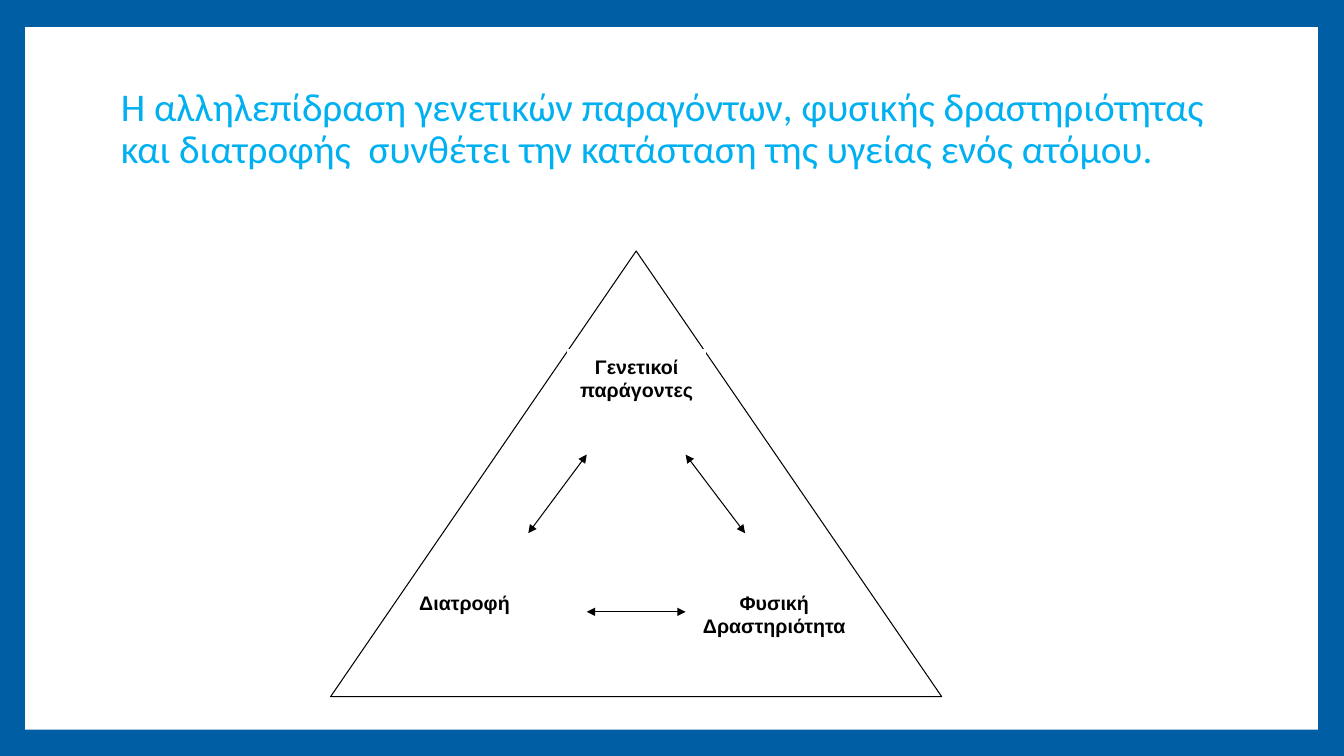
"""Build the slide on genes, activity and diet as a triangle of linked factors."""
from lxml.etree import SubElement
from pptx import Presentation
from pptx.dml.color import RGBColor
from pptx.enum.shapes import MSO_CONNECTOR as Connector, MSO_SHAPE as Shape
from pptx.enum.text import MSO_ANCHOR as Anchor, PP_ALIGN as Align
from pptx.oxml.ns import qn
from pptx.util import Inches, Pt

BLUE, SKY, WHITE, BLACK = "005EA4", "00B0F0", "FFFFFF", "000000"
LINE_WIDTH = 0.75

TITLE = ("Η αλληλεπίδραση γενετικών παραγόντων, φυσικής δραστηριότητας "
         "και διατροφής  συνθέτει την κατάσταση της υγείας ενός ατόμου.")
TITLE_BOX = (1.1, 0.57, 10.99, 1.44)
PANEL_BOX = (0.25, 0.27, 12.82, 6.97)
TRIANGLE_BOX = (3.28, 2.49, 6.06, 4.42)
FACTORS = [
    (["Γενετικοί παράγοντες"], (5.63, 3.47, 1.37, 0.78), Align.CENTER),
    (["Διατροφή"], (4.06, 5.81, 1.37, 0.78), Align.LEFT),
    (["Φυσική", "Δραστηριότητα"], (6.8, 5.81, 1.76, 0.78), Align.CENTER),
]
ARROWS = [
    ((5.82, 6.07), (6.8, 6.07)),
    ((5.82, 4.51), (5.24, 5.29)),
    ((6.8, 4.51), (7.39, 5.29)),
]


def color(value):
    return RGBColor.from_string(value)


def inches(values):
    return [Inches(value) for value in values]


def write(shape, lines, font="Arial", size=14, fill=BLACK, bold=False,
          align=Align.LEFT, anchor=Anchor.TOP, spacing=1.0):
    frame = shape.text_frame
    frame.word_wrap = True
    frame.vertical_anchor = anchor
    for index, line in enumerate(lines):
        paragraph = frame.add_paragraph() if index else frame.paragraphs[0]
        paragraph.alignment = align
        paragraph.line_spacing = spacing
        run = paragraph.add_run()
        run.text = line
        run.font.name = font
        run.font.size = Pt(size)
        run.font.bold = bold
        run.font.color.rgb = color(fill)


def add_white_shape(slide, kind, box, outline=None):
    shape = slide.shapes.add_shape(kind, *inches(box))
    shape.shadow.inherit = False
    shape.fill.solid()
    shape.fill.fore_color.rgb = color(WHITE)
    if outline:
        shape.line.color.rgb = color(outline)
        shape.line.width = Pt(LINE_WIDTH)
    else:
        shape.line.fill.background()
    return shape


def add_double_arrow(slide, start, end):
    arrow = slide.shapes.add_connector(Connector.STRAIGHT, *inches(start + end))
    arrow.line.color.rgb = color(BLACK)
    arrow.line.width = Pt(LINE_WIDTH)
    outline = arrow.line._get_or_add_ln()
    for tag in ("a:headEnd", "a:tailEnd"):
        SubElement(outline, qn(tag), type="triangle")
    SubElement(arrow._element.spPr, qn("a:effectLst"))


def main():
    presentation = Presentation()
    presentation.slide_width, presentation.slide_height = inches((13.33, 7.5))
    slide = presentation.slides.add_slide(presentation.slide_layouts[6])
    slide.background.fill.solid()
    slide.background.fill.fore_color.rgb = color(BLUE)

    add_white_shape(slide, Shape.RECTANGLE, PANEL_BOX)
    title = slide.shapes.add_textbox(*inches(TITLE_BOX))
    write(title, [TITLE], font="Calibri", size=28, fill=SKY,
          anchor=Anchor.MIDDLE, spacing=0.9)

    add_white_shape(slide, Shape.ISOSCELES_TRIANGLE, TRIANGLE_BOX, BLACK)
    for lines, box, align in FACTORS:
        factor = add_white_shape(slide, Shape.RECTANGLE, box, WHITE)
        write(factor, lines, bold=True, align=align)
    for start, end in ARROWS:
        add_double_arrow(slide, start, end)

    presentation.save("out.pptx")


if __name__ == "__main__":
    main()
